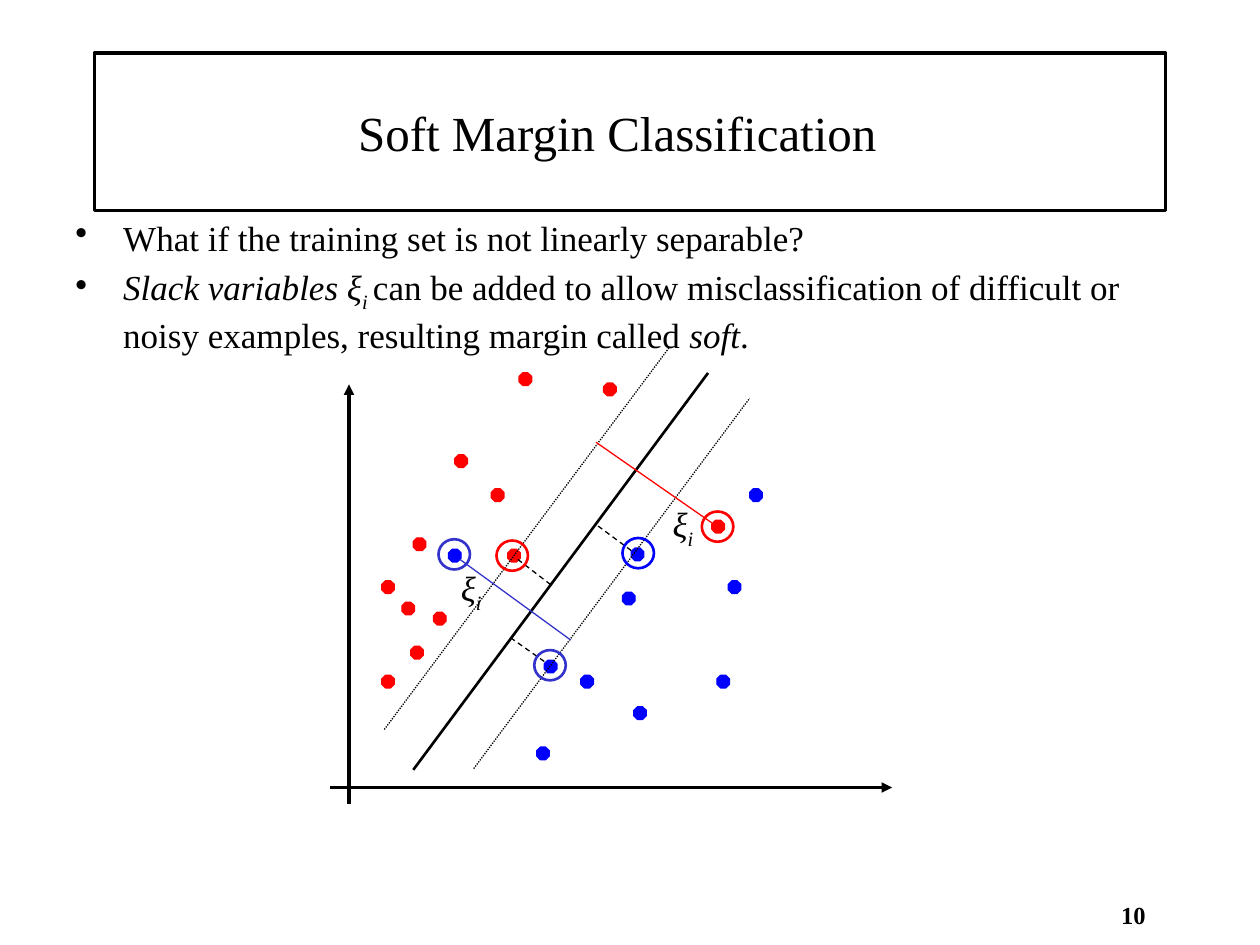
from pptx import Presentation
from pptx.dml.color import RGBColor
from pptx.enum.dml import MSO_LINE_DASH_STYLE as Dash
from pptx.enum.shapes import MSO_CONNECTOR as Connector, MSO_SHAPE as Shape
from pptx.enum.text import MSO_ANCHOR as Anchor, PP_ALIGN as Align
from pptx.oxml.xmlchemy import OxmlElement as Element
from pptx.util import Inches, Pt

BLACK = RGBColor(0, 0, 0)
WHITE = RGBColor(255, 255, 255)
RED = RGBColor(255, 0, 0)
BLUE = RGBColor(0, 0, 255)
INDIGO = RGBColor(0x33, 0x33, 0xCC)

COLUMNS, ROWS = 1000, 750  # fine grid over the whole slide
DOT = 10
RING = (25, 24)
ITALIC = {"italic": True}
SUBSCRIPT = {"italic": True, "baseline": -25000}
SLACK = [("ξ", ITALIC), ("i", SUBSCRIPT)]


class SlideBuilder:
    font = "Times New Roman"

    def __init__(self, presentation):
        self.column = presentation.slide_width / COLUMNS
        self.row = presentation.slide_height / ROWS
        self.slide = presentation.slides.add_slide(presentation.slide_layouts[6])
        self.shapes = self.slide.shapes

    def place(self, x, y):
        return round(x * self.column), round(y * self.row)

    def shape(self, kind, left, top, width, height, fill=None, line=None, weight=0.75):
        shape = self.shapes.add_shape(
            kind, *self.place(left, top), *self.place(width, height))
        shape.shadow.inherit = False
        for part, colour in ((shape.fill, fill), (shape.line.fill, line)):
            if colour is None:
                part.background()
            else:
                part.solid()
                part.fore_color.rgb = colour
        if line is not None:
            shape.line.width = Pt(weight)
        return shape

    def dot(self, left, top, colour):
        self.shape(Shape.OCTAGON, left, top, DOT, DOT, colour, colour)

    def ring(self, left, top, colour):
        self.shape(Shape.OVAL, left, top, *RING, line=colour, weight=1.5)

    def line(self, start, end, colour=BLACK, weight=0.75, dash=None, arrow=False):
        line = self.shapes.add_connector(
            Connector.STRAIGHT, *self.place(*start), *self.place(*end))
        line.line.color.rgb = colour
        line.line.width = Pt(weight)
        if dash is not None:
            line.line.dash_style = dash
        if arrow:
            head = Element("a:tailEnd")
            head.set("type", "triangle")
            line.line._get_or_add_ln().append(head)
        line._element.spPr.append(Element("a:effectLst"))

    def fill_text(self, shape, paragraphs, size, align=Align.LEFT, bold=False,
                  bullets=False, **frame_format):
        frame = shape.text_frame
        values = {"word_wrap": True, "vertical_anchor": Anchor.TOP} | frame_format
        for name, value in values.items():
            setattr(frame, name, value)
        for index, runs in enumerate(paragraphs):
            paragraph = frame.add_paragraph() if index else frame.paragraphs[0]
            paragraph.alignment = align
            if bullets:
                self.bullet(paragraph)
            for text, style in runs:
                self.run(paragraph, text, {"size": Pt(size), "bold": bold} | style)

    def run(self, paragraph, text, style):
        run = paragraph.add_run()
        run.text = text
        run.font.color.rgb = BLACK
        for name, value in ({"name": self.font} | style).items():
            if name == "baseline":
                run.font._element.set(name, str(value))
            else:
                setattr(run.font, name, value)

    def bullet(self, paragraph):
        paragraph.space_before = Pt(4)
        properties = paragraph._p.get_or_add_pPr()
        indent = Inches(0.38)
        properties.set("marL", str(indent))
        properties.set("indent", str(-indent))
        mark = Element("a:buChar")
        mark.set("char", "•")
        properties.append(mark)

    def text(self, left, top, width, height, paragraphs, size, **style):
        box = self.shapes.add_textbox(
            *self.place(left, top), *self.place(width, height))
        self.fill_text(box, paragraphs, size, **style)


def main():
    presentation = Presentation()
    presentation.slide_width, presentation.slide_height = Inches(10), Inches(7.5)
    page = SlideBuilder(presentation)

    # Page number
    number = page.shape(Shape.RECTANGLE, 883, 714, 33, 36, fill=WHITE)
    margins = dict.fromkeys(
        ("margin_left", "margin_right", "margin_top", "margin_bottom"), 0)
    page.fill_text(number, [[("10", {})]], 14, Align.CENTER, bold=True, **margins)

    # Framed title, set slightly left of centre
    title = page.shape(Shape.RECTANGLE, 75, 42, 850, 125, line=BLACK, weight=2)
    page.fill_text(title, [[("Soft Margin Classification", {})]], 28, Align.CENTER,
                   vertical_anchor=Anchor.MIDDLE, margin_right=Inches(0.3))

    # Bulleted text
    page.text(50, 167, 900, 550, [
        [("What if the training set is not linearly separable?", {})],
        [("Slack variables ξ", ITALIC), ("i ", SUBSCRIPT),
         ("can be added to allow misclassification of difficult or noisy "
          "examples, resulting margin called ", {}),
         ("soft", ITALIC), (".", {})],
    ], 20, bullets=True)

    # Axes
    page.line((277, 638), (277, 305), weight=2, arrow=True)
    page.line((262, 625), (708, 625), weight=2, arrow=True)

    # Training points of the two classes
    points = {
        RED: [(390, 388), (328, 427), (344, 486), (303, 536), (361, 361),
              (303, 461), (319, 478), (403, 436), (412, 296), (479, 304),
              (326, 513), (565, 413)],
        BLUE: [(501, 435), (461, 536), (569, 536), (426, 593), (494, 470),
               (432, 524), (503, 561), (578, 461), (595, 388), (356, 436)],
    }
    for colour, places in points.items():
        for left, top in places:
            page.dot(left, top, colour)

    # Separating line and its margins
    page.line((328, 611), (562, 296), weight=1.5)
    for start, end in (((376, 610), (595, 316)), ((305, 579), (531, 276))):
        page.line(start, end, dash=Dash.ROUND_DOT)

    # Distances from support vectors to the separating line
    for start, end in (((501, 437), (474, 417)), ((432, 525), (405, 506)),
                       ((437, 464), (411, 444))):
        page.line(start, end, dash=Dash.DASH)

    # Slack distances and their labels
    page.line((565, 415), (473, 351), RED)
    page.line((365, 444), (453, 508), INDIGO)
    for left, top in ((524, 394), (356, 445)):
        page.text(left, top, 77, 43, [SLACK], 20)

    # Rings around support vectors and misclassified points
    for left, top, colour in ((394, 429, RED), (424, 516, INDIGO), (494, 427, BLUE),
                              (557, 406, RED), (348, 428, INDIGO)):
        page.ring(left, top, colour)

    presentation.save("out.pptx")


if __name__ == "__main__":
    main()
